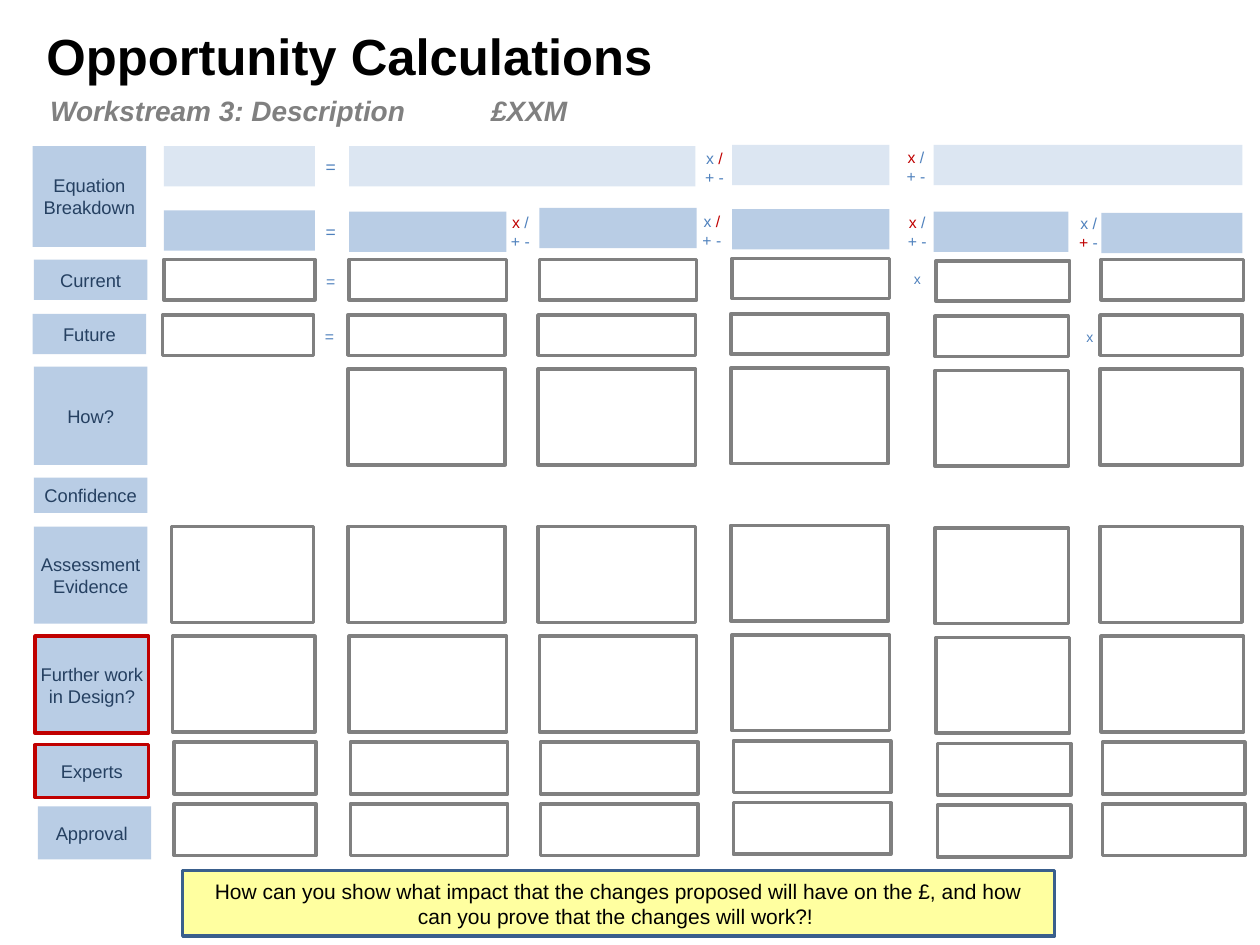
from pptx import Presentation
from pptx.dml.color import RGBColor
from pptx.enum.shapes import MSO_SHAPE
from pptx.enum.text import MSO_ANCHOR, PP_ALIGN
from pptx.util import Inches, Pt

FONT = "Arial"
LIGHT_BLUE, MID_BLUE, NAVY = "DCE6F2", "B9CDE5", "254061"
BLUE, RED, GREY = "4F81BD", "C00000", "808080"

# Text, left, top, height, outline
LABELS = [
    ("Equation Breakdown", 0.26, 1.16, 0.8, None),
    ("Current", 0.27, 2.06, 0.32, None),
    ("Future", 0.26, 2.49, 0.32, None),
    ("How?", 0.27, 2.91, 0.78, None),
    ("Confidence", 0.27, 3.79, 0.28, None),
    ("Assessment Evidence", 0.27, 4.18, 0.77, None),
    ("Further work in Design?", 0.28, 5.05, 0.77, RED),
    ("Experts", 0.28, 5.91, 0.42, RED),
    ("Approval ", 0.3, 6.4, 0.42, None),
]

# Left, top, width
SUMMARY_BARS = [(1.3, 1.16, 1.2), (2.77, 1.16, 2.75), (5.81, 1.15, 1.25), (7.41, 1.15, 2.45)]
DETAIL_BARS = [(1.3, 1.67, 1.2), (2.77, 1.68, 1.25), (4.28, 1.65, 1.25),
               (5.81, 1.66, 1.25), (7.41, 1.68, 1.07), (8.74, 1.69, 1.12)]

# Left, width and vertical nudge of each answer column
RESULT_COLUMN = (1.3, 1.2, 0)
EVIDENCE_COLUMN = (1.37, 1.13, 0)
FACTOR_COLUMNS = [(2.77, 1.25, 0), (4.28, 1.25, 0), (5.81, 1.25, -0.01),
                  (7.43, 1.06, 0.01), (8.74, 1.13, 0)]

# First column, shift to the right, top, height
ANSWER_ROWS = [
    (RESULT_COLUMN, 0, 2.06, 0.32),
    (RESULT_COLUMN, -0.01, 2.5, 0.32),
    (None, -0.01, 2.93, 0.76),
    (EVIDENCE_COLUMN, -0.01, 4.18, 0.76),
    (EVIDENCE_COLUMN, 0, 5.05, 0.76),
    (EVIDENCE_COLUMN, 0.01, 5.89, 0.41),
    (EVIDENCE_COLUMN, 0.01, 6.38, 0.41),
]

# Symbol, left, top, width, size
SYMBOLS = [
    ("=", 2.41, 1.16, 0.43, 10),
    ("=", 2.41, 1.68, 0.43, 10),
    ("=", 2.41, 2.07, 0.43, 9),
    ("=", 2.4, 2.51, 0.43, 9),
    ("x", 7.04, 2.05, 0.48, 8),
    ("x", 8.53, 2.51, 0.24, 8),
]

RED_TIMES = [[("x", RED), (" /", BLUE)], [("+ -", BLUE)]]
RED_DIVIDE = [[("x ", BLUE), ("/", RED)], [("+ -", BLUE)]]
RED_PLUS = [[("x /", BLUE)], [("+", RED), (" -", BLUE)]]

# Lines of runs, left, top
OPERATORS = [
    (RED_TIMES, 3.95, 1.68), (RED_DIVIDE, 5.47, 1.67), (RED_TIMES, 7.1, 1.68),
    (RED_TIMES, 7.09, 1.16), (RED_PLUS, 8.46, 1.69), (RED_DIVIDE, 5.49, 1.17),
]


def color(value):
    return RGBColor.from_string(value)


def write_text(shape, lines, size, align=PP_ALIGN.CENTER, anchor=MSO_ANCHOR.MIDDLE,
               inset=None, bold=False, italic=False):
    """Fill a shape with lines, each a list of (text, colour) runs."""
    frame = shape.text_frame
    frame.word_wrap = True
    frame.vertical_anchor = anchor
    if inset is not None:
        frame.margin_left = frame.margin_right = Inches(inset)
        frame.margin_top = frame.margin_bottom = Inches(inset)
    for index, runs in enumerate(lines):
        paragraph = frame.add_paragraph() if index else frame.paragraphs[0]
        paragraph.alignment = align
        for text, text_color in runs:
            run = paragraph.add_run()
            run.text = text
            run.font.name = FONT
            run.font.size = Pt(size)
            run.font.bold = bold
            run.font.italic = italic
            run.font.color.rgb = color(text_color)


def add_box(slide, left, top, width, height, fill=None, line=None):
    shape = slide.shapes.add_shape(MSO_SHAPE.RECTANGLE, Inches(left), Inches(top),
                                   Inches(width), Inches(height))
    shape.shadow.inherit = False
    if fill:
        shape.fill.solid()
        shape.fill.fore_color.rgb = color(fill)
    else:
        shape.fill.background()
    if line:
        shape.line.color.rgb = color(line)
        shape.line.width = Pt(2)
    else:
        shape.line.fill.background()
    return shape


def add_text(slide, left, top, width, height, lines, size, **options):
    box = slide.shapes.add_textbox(Inches(left), Inches(top), Inches(width), Inches(height))
    write_text(box, lines, size, **options)


def add_headings(slide):
    options = {"align": PP_ALIGN.LEFT, "anchor": MSO_ANCHOR.BOTTOM, "bold": True}
    add_text(slide, 0.27, 0.19, 8.41, 0.54, [[("Opportunity Calculations", "000000")]],
             29, **options)
    add_text(slide, 0.3, 0.52, 8.41, 0.54, [[("Workstream 3: Description \t\t£XXM", GREY)]],
             16, italic=True, **options)


def add_labels(slide):
    for text, left, top, height, line in LABELS:
        label = add_box(slide, left, top, 0.9, height, MID_BLUE, line)
        write_text(label, [[(text, NAVY)]], 10.5, inset=0.04)


def add_equations(slide):
    for bars, fill in ((SUMMARY_BARS, LIGHT_BLUE), (DETAIL_BARS, MID_BLUE)):
        for left, top, width in bars:
            add_box(slide, left, top, width, 0.32, fill)
    for symbol, left, top, width, size in SYMBOLS:
        add_text(slide, left, top, width, 0.32, [[(symbol, BLUE)]], size, inset=0)
    for lines, left, top in OPERATORS:
        add_text(slide, left, top, 0.36, 0.32, lines, 9, inset=0)


def add_answer_grid(slide):
    for first_column, shift, top, height in ANSWER_ROWS:
        columns = [first_column] if first_column else []
        for left, width, nudge in columns + FACTOR_COLUMNS:
            add_box(slide, left + shift, top + nudge, width, height, line=GREY)


def add_question(slide):
    question = add_box(slide, 1.45, 6.91, 6.92, 0.52, "FFFFA0", "3A5F8C")
    write_text(question, [[("How can you show what impact that the changes proposed will have "
                            "on the £, and how can you prove that the changes will work?! ",
                            "000000")]], 12)


def main():
    presentation = Presentation()
    presentation.slide_width = Inches(10)
    presentation.slide_height = Inches(7.5)
    slide = presentation.slides.add_slide(presentation.slide_layouts[6])
    add_headings(slide)
    add_equations(slide)
    add_labels(slide)
    add_answer_grid(slide)
    add_question(slide)
    presentation.save("out.pptx")


if __name__ == "__main__":
    main()
